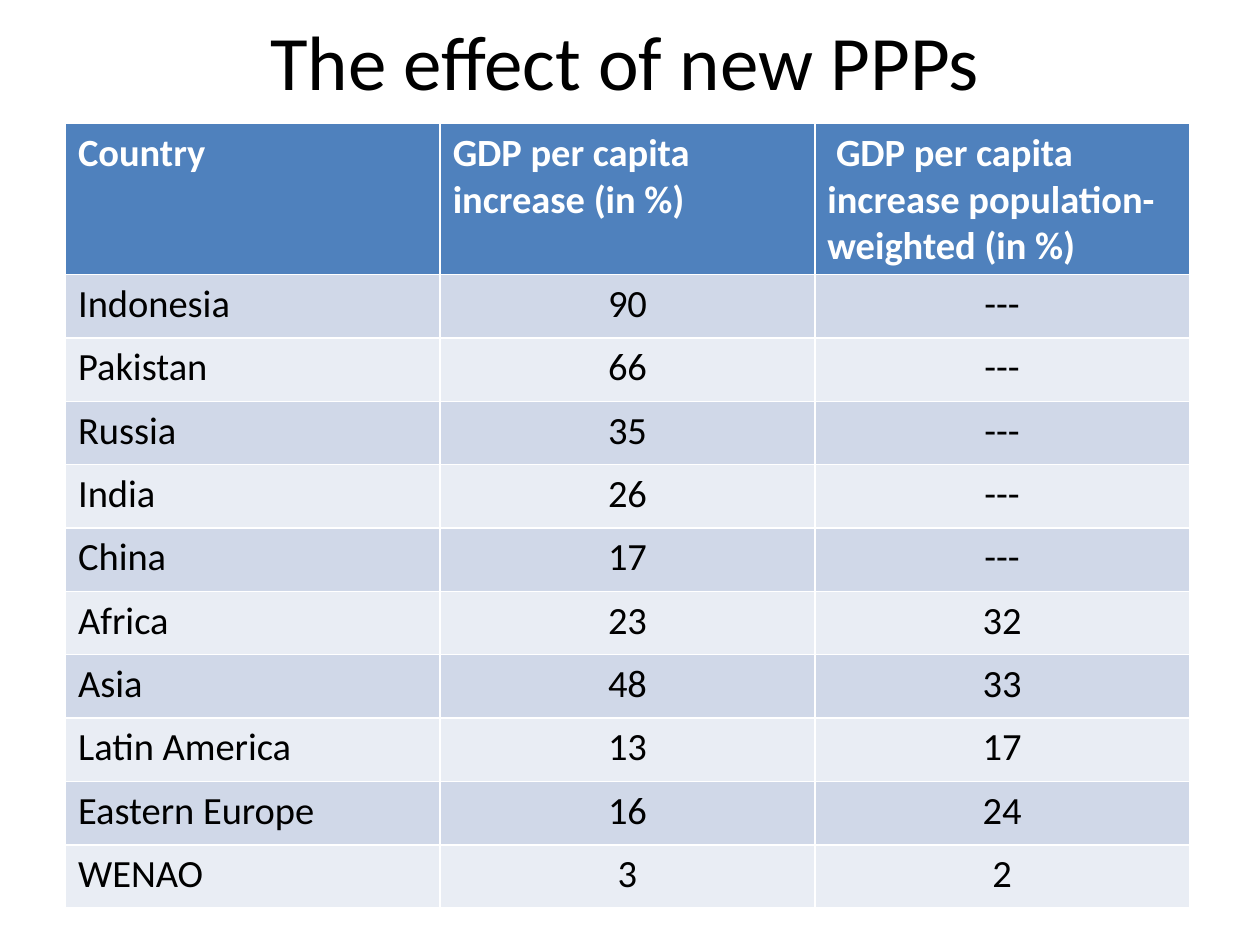
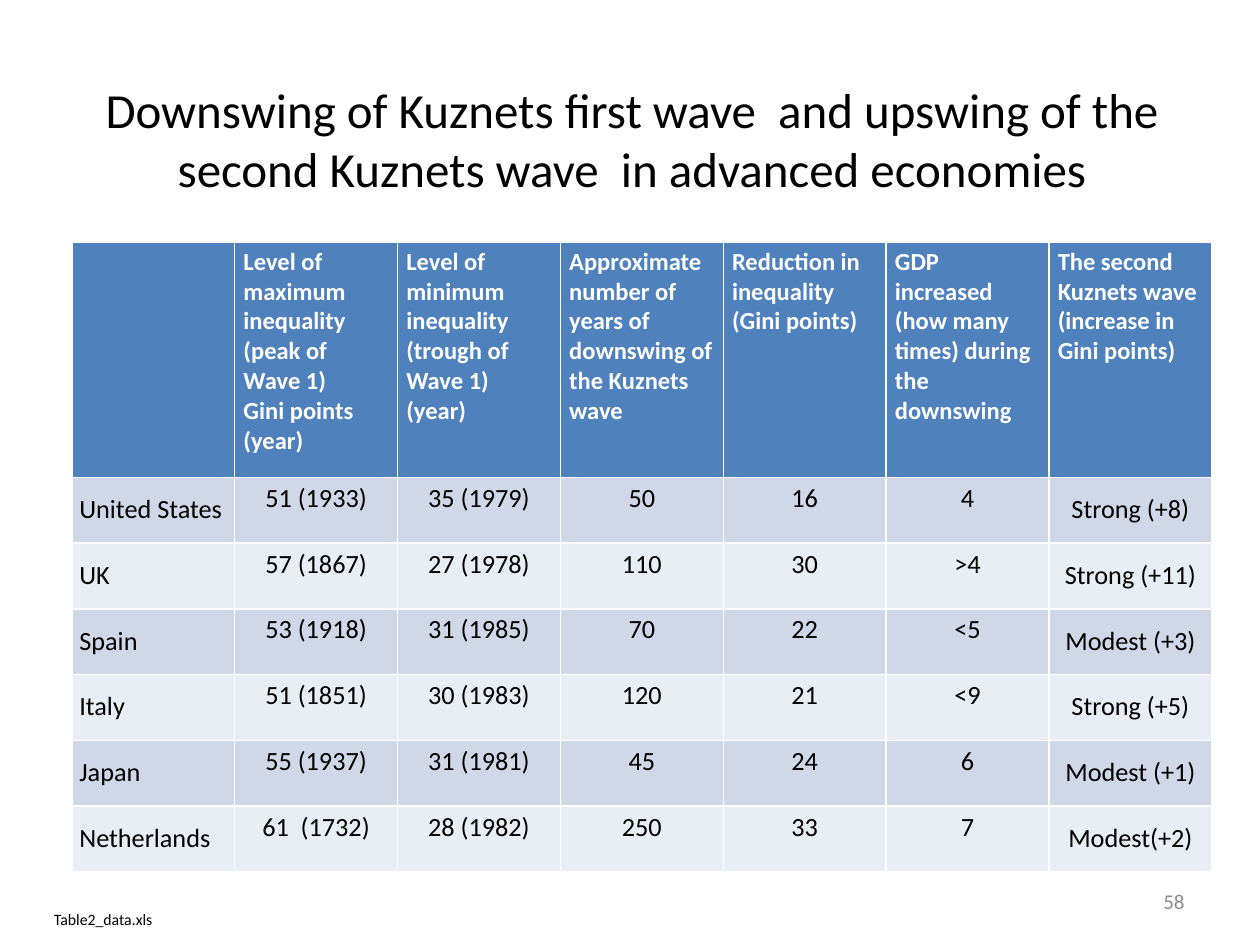
"""Build two slides of tables on incomes and inequality."""
from pptx import Presentation
from pptx.dml.color import RGBColor
from pptx.enum.text import MSO_ANCHOR, PP_ALIGN
from pptx.util import Inches, Pt

LEFT, CENTER, RIGHT = PP_ALIGN.LEFT, PP_ALIGN.CENTER, PP_ALIGN.RIGHT
TOP, MIDDLE = MSO_ANCHOR.TOP, MSO_ANCHOR.MIDDLE
FONT = "Calibri"
COLORS = {"head": "4F81BD", "odd": "D0D8E8", "even": "E9EDF4",
          "white": "FFFFFF", "ink": "000000", "gray": "8C8C8C"}

INCOME = [
    ["Country", "GDP per capita increase (in %)",
     " GDP per capita increase population-weighted (in %)"],
    ["Indonesia", "90", "---"],
    ["Pakistan", "66", "---"],
    ["Russia", "35", "---"],
    ["India", "26", "---"],
    ["China", "17", "---"],
    ["Africa", "23", "32"],
    ["Asia", "48", "33"],
    ["Latin America", "13", "17"],
    ["Eastern Europe", "16", "24"],
    ["WENAO", "3", "2"],
]
WAVES = [
    ["", "Level of maximum inequality (peak of Wave 1)\nGini points (year)",
     "Level of minimum  inequality (trough of Wave 1)\n(year)",
     "Approximate number of years of downswing of the Kuznets wave",
     "Reduction in inequality (Gini points)",
     "GDP increased (how many times) during the downswing",
     "The second Kuznets wave (increase in Gini points)"],
    ["United States", "51 (1933)", "35 (1979)", "50", "16", "4", "Strong (+8)"],
    ["UK", "57 (1867)", "27 (1978)", "110", "30", ">4", "Strong (+11)"],
    ["Spain", "53 (1918)", "31 (1985)", "70", "22", "<5", "Modest (+3)"],
    ["Italy", "51 (1851)", "30 (1983)", "120", "21", "<9", "Strong (+5)"],
    ["Japan", "55 (1937)", "31 (1981)", "45", "24", "6", "Modest (+1)"],
    ["Netherlands", "61  (1732)", "28 (1982)", "250", "33", "7", "Modest(+2)"],
]


class Deck:
    """Hold the style and the current slide."""

    def __init__(self):
        self.show = Presentation()
        self.show.slide_width, self.show.slide_height = Inches(10), Inches(7.5)
        self.slide = None

    def page(self):
        """Start a blank slide."""
        self.slide = self.show.slides.add_slide(self.show.slide_layouts[6])

    def style(self, frame, size, color, align=LEFT, bold=False):
        """Format every paragraph of a text frame."""
        for para in frame.paragraphs:
            para.alignment = align
            for run in para.runs:
                font = run.font
                font.name, font.size, font.bold = FONT, Pt(size), bold
                font.color.rgb = RGBColor.from_string(COLORS[color])

    def text(self, words, box, size, color="ink", align=LEFT, anchor=MIDDLE):
        """Add a text box."""
        frame = self.slide.shapes.add_textbox(*map(Inches, box)).text_frame
        frame.word_wrap, frame.vertical_anchor = True, anchor
        frame.text = words
        self.style(frame, size, color, align)

    def title(self, words, box, size):
        """Add a centred slide title."""
        self.text(words, box, size, align=CENTER)

    def table(self, data, box, head, sizes, pads=None, edge=None):
        """Add a banded table; edge gives the pads of its outer body columns."""
        rows, cols = len(data), len(data[0])
        grid = self.slide.shapes.add_table(rows, cols, *map(Inches, box)).table
        for col in grid.columns:
            col.width = Inches(box[2] / cols)
        for r, line in enumerate(data):
            high = (box[3] - head) / (rows - 1) if r else head
            grid.rows[r].height = Inches(high)
            fill = ("odd" if r % 2 else "even") if r else "head"
            for c, words in enumerate(line):
                cell = grid.cell(r, c)
                cell.fill.solid()
                cell.fill.fore_color.rgb = RGBColor.from_string(COLORS[fill])
                cell.text = words
                outer = edge and r and c in (0, cols - 1)
                self.pad(cell, edge if outer else pads)
                if outer:
                    cell.text_frame.paragraphs[0].line_spacing = 1.5
                self.style(cell.text_frame, sizes[1 if r else 0],
                           "ink" if r else "white",
                           CENTER if r and c else LEFT, not r)

    def pad(self, cell, pads):
        """Set the side and the top and bottom margins of a cell."""
        if pads:
            side, end = map(Inches, pads)
            cell.margin_left = cell.margin_right = side
            cell.margin_top = cell.margin_bottom = end


def main():
    """Build and save the slides."""
    deck = Deck()
    deck.page()
    deck.title("The effect of new PPPs", (0.5, 0, 8.92, 0.95), 44)
    deck.table(INCOME, (0.52, 0.98, 8.92, 6.23), 1.2, (22, 22))

    deck.page()
    deck.title("Downswing of Kuznets first wave  and upswing of the second "
               "Kuznets wave  in advanced economies", (0.69, 0.42, 8.65, 1.36), 28)
    deck.table(WAVES, (0.57, 1.92, 9.05, 5), 1.87, (14, 15), (0.07, 0.04), (0.06, 0))
    deck.text("58", (7.17, 6.95, 2.33, 0.4), 12, "gray", RIGHT)
    deck.text("Table2_data.xls", (0.33, 7.17, 2.17, 0.25), 9, anchor=TOP)
    deck.show.save("out.pptx")


if __name__ == "__main__":
    main()
